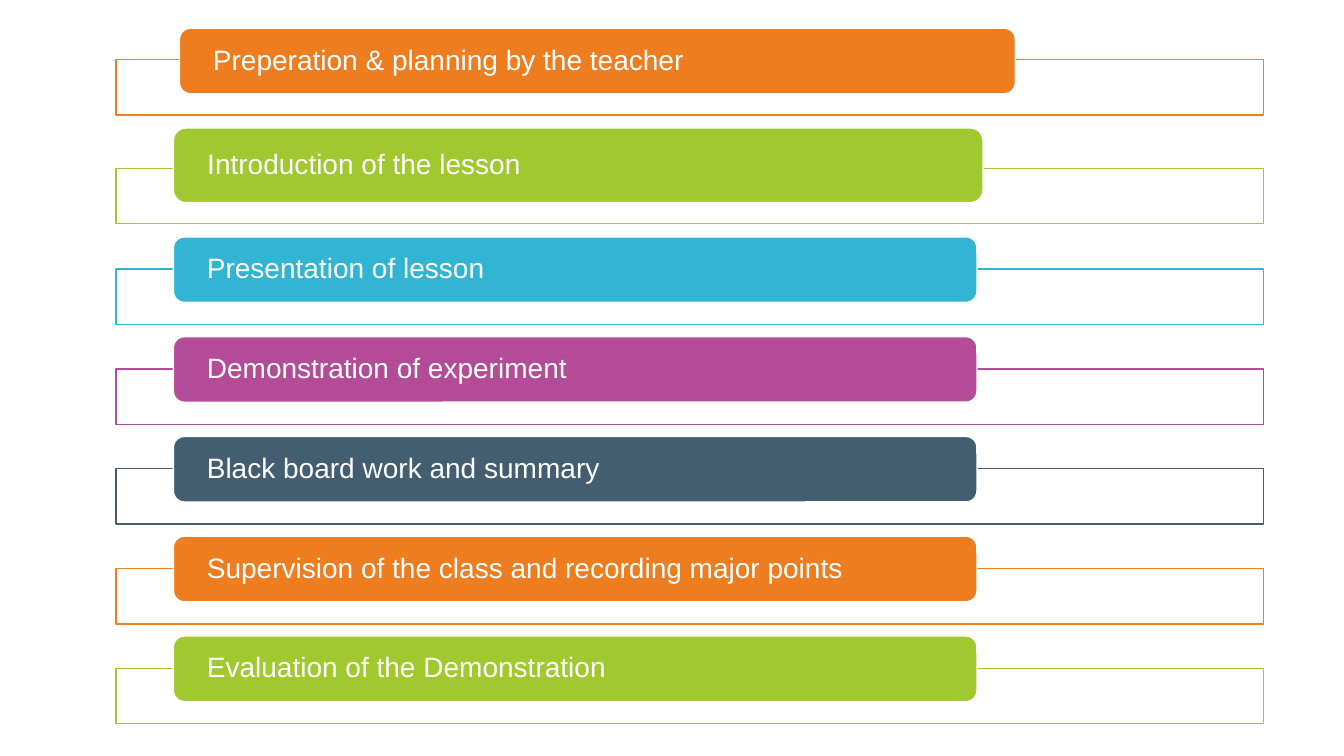
"""Build a slide listing the seven steps of a demonstration lesson."""
from dataclasses import dataclass

from pptx import Presentation
from pptx.dml.color import RGBColor
from pptx.enum.shapes import MSO_SHAPE as Kind
from pptx.enum.text import MSO_ANCHOR as Anchor, PP_ALIGN as Align
from pptx.oxml.ns import qn
from pptx.shapes.autoshape import Shape
from pptx.slide import Slide
from pptx.util import Inches, Pt
from lxml.etree import SubElement

WHITE = RGBColor(0xFF, 0xFF, 0xFF)
ORANGE = RGBColor(0xED, 0x7D, 0x1F)
GREEN = RGBColor(0xA0, 0xC8, 0x2F)
BLUE = RGBColor(0x32, 0xB5, 0xD3)
PURPLE = RGBColor(0xB4, 0x4B, 0x97)
SLATE = RGBColor(0x43, 0x5E, 0x71)

PITCH = 0.99
FRAME_LEFT, FRAME_WIDTH, FRAME_HEIGHT = 1.15, 11.38, 0.55
FRAME_DROP = 0.32
FRAME_ALPHA = "90000"

BODY = {
    "word_wrap": True,
    "vertical_anchor": Anchor.MIDDLE,
    "margin_left": Inches(0.3),
    "margin_right": Inches(0.3),
    "margin_top": 0,
    "margin_bottom": 0,
}
PARA = {"alignment": Align.LEFT, "line_spacing": 0.9}
FONT = {"name": "Arial", "size": Pt(20)}


@dataclass
class Step:
    """One step: its label, colour, frame top and bar box."""

    label: str
    color: RGBColor
    top: float
    left: float = 1.72
    width: float = 7.97
    height: float = 0.65
    drop: float = FRAME_DROP


LATER = [
    ("Presentation of lesson", BLUE),
    ("Demonstration of experiment", PURPLE),
    ("Black board work and summary", SLATE),
    ("Supervision of the class and recording major points", ORANGE),
    ("Evaluation of the Demonstration", GREEN),
]
STEPS = [
    Step("Preperation & planning by the teacher", ORANGE, 0.59,
         left=1.78, width=8.29, drop=0.31),
    Step("Introduction of the lesson", GREEN, 1.67,
         width=8.03, height=0.74, drop=0.4),
    *(Step(label, color, 2.67 + PITCH * row)
      for row, (label, color) in enumerate(LATER)),
]


def apply(target: object, values: dict) -> None:
    """Set every named attribute on the target."""
    for name, value in values.items():
        setattr(target, name, value)


def add_box(slide: Slide, kind: Kind, box: tuple[float, ...],
            fill: RGBColor, line: RGBColor) -> Shape:
    """Add a flat shape with a solid fill and a one point outline."""
    shape = slide.shapes.add_shape(kind, *map(Inches, box))
    shape.shadow.inherit = False
    shape.fill.solid()
    shape.fill.fore_color.rgb = fill
    shape.line.color.rgb = line
    shape.line.width = Pt(1)
    return shape


def add_step(slide: Slide, step: Step) -> None:
    """Draw the frame of a step and its labelled bar."""
    frame = add_box(slide, Kind.RECTANGLE,
                    (FRAME_LEFT, step.top, FRAME_WIDTH, FRAME_HEIGHT),
                    WHITE, step.color)
    tint = frame.element.spPr.find(qn("a:solidFill")).find(qn("a:srgbClr"))
    SubElement(tint, qn("a:alpha"), val=FRAME_ALPHA)

    bar = add_box(slide, Kind.ROUNDED_RECTANGLE,
                  (step.left, step.top - step.drop, step.width, step.height),
                  step.color, WHITE)
    body = bar.text_frame
    apply(body, BODY)
    para = body.paragraphs[0]
    apply(para, PARA)
    run = para.add_run()
    run.text = step.label
    apply(run.font, FONT)
    run.font.color.rgb = WHITE


def main() -> None:
    """Build and save the deck."""
    deck = Presentation()
    deck.slide_width, deck.slide_height = Inches(13.33), Inches(7.5)
    slide = deck.slides.add_slide(deck.slide_layouts[6])
    for step in STEPS:
        add_step(slide, step)
    deck.save("out.pptx")


if __name__ == "__main__":
    main()
